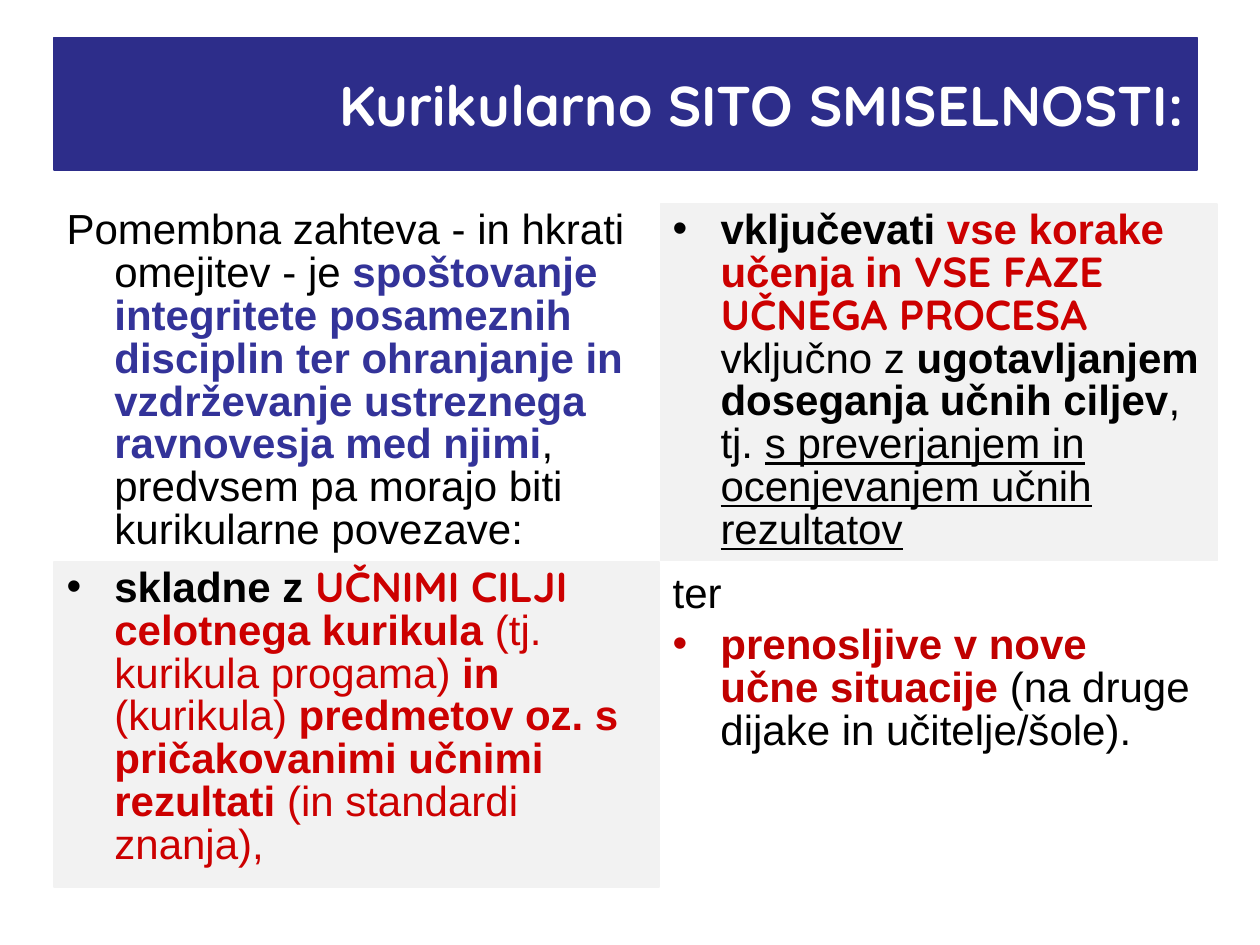
"""Build the slide on the curricular sieve of meaningfulness."""
from lxml.etree import SubElement
from pptx import Presentation
from pptx.dml.color import RGBColor as Rgb
from pptx.enum.shapes import MSO_SHAPE as Shape
from pptx.enum.text import MSO_ANCHOR as Anchor, PP_ALIGN as Align
from pptx.oxml.ns import qn
from pptx.util import Inches, Pt

COLORS = {"navy": "2D2D8A", "blue": "333399", "red": "CC0000", "dark_red": "C00000",
          "black": "000000", "white": "FFFFFF", "gray": "F2F2F2"}
BODY, ACCENT = "Arial", "Quicksand"
LEFT, RIGHT = 0.43, 5.24
TOP, LOWER = 1.62, 4.46
LEFT_WIDTH = 4.8
INDENT = Inches(0.38)

deck = Presentation()
deck.slide_width, deck.slide_height = Inches(10), Inches(7.5)
page = deck.slides.add_slide(deck.slide_layouts[6])


def add_panel(left, top, width, height, color=None):
    area = [Inches(length) for length in (left, top, width, height)]
    if color:
        box = page.shapes.add_shape(Shape.RECTANGLE, *area)
        box.shadow.inherit = False
        box.fill.solid()
        box.fill.fore_color.rgb = box.line.color.rgb = Rgb.from_string(COLORS[color])
        box.line.width = Pt(0.75)
    else:
        box = page.shapes.add_textbox(*area)
    box.text_frame.word_wrap = True
    box.text_frame.vertical_anchor = Anchor.TOP
    return box.text_frame


def add_span(para, text, color="black", style="", font=BODY, size=24):
    span = para.add_run()
    span.text = text
    span.font.name, span.font.size = font, Pt(size)
    span.font.bold, span.font.underline = "b" in style, "u" in style
    span.font.color.rgb = Rgb.from_string(COLORS[color])


title = add_panel(LEFT, 0.3, 9.07, 1.05, "navy")
title.vertical_anchor = Anchor.MIDDLE
title.paragraphs[0].alignment = Align.RIGHT
add_span(title.paragraphs[0], "Kurikularno SITO SMISELNOSTI:", "white", "b", ACCENT, 32)

panels = [
    ((LEFT, TOP, LEFT_WIDTH, 5.28), [
        (False, [
            ("Pomembna zahteva - in hkrati omejitev - je ",),
            ("spoštovanje integritete posameznih disciplin ter ohranjanje in "
             "vzdrževanje ustreznega ravnovesja med njimi", "blue", "b"),
            (", predvsem pa morajo biti kurikularne povezave:",)])]),
    ((RIGHT, TOP, 4.42, 2.83, "gray"), [
        (True, [
            ("vključevati", "black", "b"),
            (" vse korake učenja in ", "red", "b"),
            ("VSE FAZE UČNEGA PROCESA ", "red", "b", ACCENT),
            ("vključno z ",),
            ("ugotavljanjem doseganja učnih ciljev", "black", "b"),
            (", tj. ",),
            ("s preverjanjem in ocenjevanjem učnih rezultatov", "black", "u")])]),
    ((LEFT, LOWER, LEFT_WIDTH, 2.58, "gray"), [
        (True, [
            ("skladne z ", "black", "b"),
            ("UČNIMI CILJI ", "red", "b", ACCENT),
            ("celotnega kurikula ", "red", "b"),
            ("(tj. kurikula progama) ", "red"),
            ("in ", "red", "b"),
            ("(kurikula)", "red"),
            (" predmetov oz. s pričakovanimi učnimi rezultati ", "red", "b"),
            ("(in standardi znanja),", "red")])]),
    ((RIGHT, LOWER + 0.05, 4.34, 1.45), [
        (False, [("ter",)]),
        (True, [
            ("prenosljive v nove učne situacije ", "dark_red", "b"),
            ("(na druge dijake in učitelje/šole).",)])]),
]

for area, paragraphs in panels:
    frame = add_panel(*area)
    for index, (bulleted, spans) in enumerate(paragraphs):
        para = frame.add_paragraph() if index else frame.paragraphs[0]
        para.alignment = Align.LEFT
        para.line_spacing = 0.85
        para.space_before = Pt(4.8 if index else 0)
        layout = para._p.get_or_add_pPr()
        layout.set("marL", str(INDENT))
        layout.set("indent", str(-INDENT))
        if bulleted:
            SubElement(layout, qn("a:buFont"), typeface=BODY)
            SubElement(layout, qn("a:buChar"), char="•")
        else:
            SubElement(layout, qn("a:buNone"))
        for span in spans:
            add_span(para, *span)

deck.save("out.pptx")
